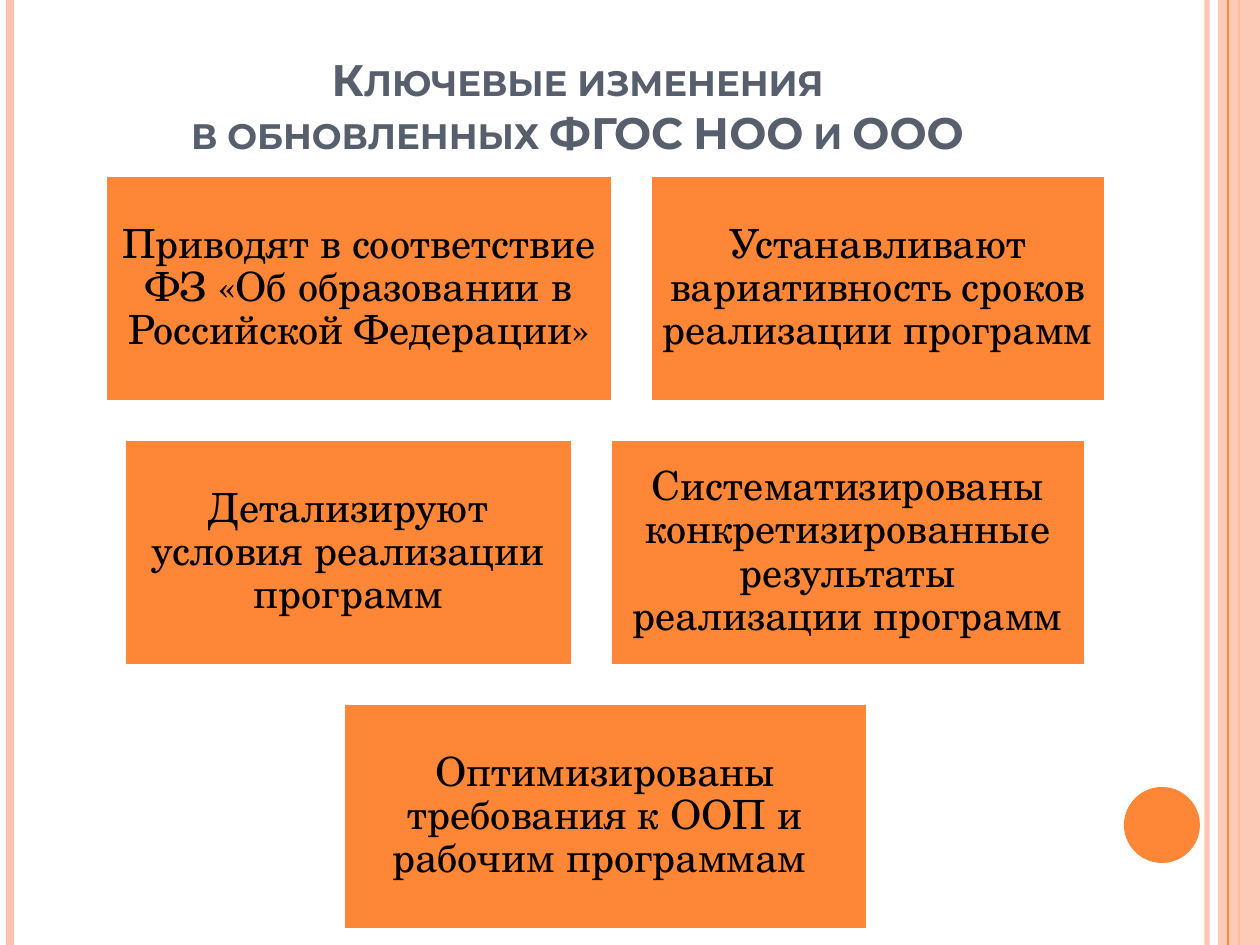
from lxml import etree
from pptx import Presentation
from pptx import util as u
from pptx.dml.color import RGBColor
from pptx.enum import shapes, text
from pptx.oxml import ns

PX = 914400 / 126  # EMU per px
WIDTH, HEIGHT = 1260, 945

ORANGE = RGBColor(0xFE, 0x86, 0x37)
PEACH = RGBColor(0xFE, 0xC3, 0xAE)
SLATE = RGBColor(0x57, 0x5F, 0x6D)
WHITE = RGBColor(0xFF, 0xFF, 0xFF)
BLACK = RGBColor(0x00, 0x00, 0x00)

TITLE_LINES = ["Ключевые изменения", "в обновленных ФГОС НОО и ООО"]

# Each row of cards: (width, text)
CARD_ROWS = [
    [(508, "Приводят в соответствие ФЗ «Об образовании в Российской Федерации»"),
     (456, "Устанавливают вариативность сроков реализации программ")],
    [(449, "Детализируют условия реализации программ"),
     (476, "Систематизированы конкретизированные результаты реализации программ")],
    [(525, "Оптимизированы требования к ООП и рабочим программам ")],
]
CARDS_TOP, CARD_HEIGHT, CARD_GAP, CARDS_CENTRE = 175, 227, 37, 605


def px(length):
    return u.Emu(round(length * PX))


def set_alpha(holder, percent):
    """Make the solid colour inside an element partly transparent."""
    colour = next(holder.iter(ns.qn("a:srgbClr")))
    etree.SubElement(colour, ns.qn("a:alpha")).set("val", str(percent * 1000))


def add_stripe(page, x, colour, points, alpha=None):
    stripe = page.shapes.add_connector(
        shapes.MSO_CONNECTOR.STRAIGHT, px(x), 0, px(x), px(HEIGHT))
    stripe.line.color.rgb = colour
    stripe.line.width = u.Pt(points)
    properties = stripe._element.spPr
    if alpha:
        set_alpha(properties, alpha)
    etree.SubElement(properties, ns.qn("a:effectLst"))


def add_filled(page, kind, left, top, width, height, colour):
    shape = page.shapes.add_shape(kind, px(left), px(top), px(width), px(height))
    shape.shadow.inherit = False
    shape.fill.solid()
    shape.fill.fore_color.rgb = colour
    shape.line.fill.background()
    return shape


def add_span(para, words, font, size, colour):
    span = para.add_run()
    span.text = words
    span.font.name = font
    span.font.size = u.Pt(size)
    span.font.color.rgb = colour
    return span


def add_card(page, left, top, width, words):
    box = add_filled(page, shapes.MSO_SHAPE.RECTANGLE,
                     left, top, width, CARD_HEIGHT, ORANGE)
    box.line.color.rgb = WHITE
    box.line.width = u.Pt(2)
    frame = box.text_frame
    frame.word_wrap = True
    frame.vertical_anchor = text.MSO_ANCHOR.MIDDLE
    frame.margin_left = frame.margin_right = u.Inches(0.1)
    frame.margin_top = frame.margin_bottom = u.Inches(0.1)
    para = frame.paragraphs[0]
    para.alignment = text.PP_ALIGN.CENTER
    para.line_spacing = 0.9
    add_span(para, words, "TeX Gyre Schola", 23, BLACK)


def add_card_rows(page):
    for index, row in enumerate(CARD_ROWS):
        top = CARDS_TOP + index * (CARD_HEIGHT + CARD_GAP)
        total = sum(width for width, _ in row) + CARD_GAP * (len(row) - 1)
        left = CARDS_CENTRE - total // 2
        for width, words in row:
            add_card(page, left, top, width, words)
            left += width + CARD_GAP


def fill_title(page):
    title = page.shapes.title
    title.left, title.top = px(63), px(38)
    title.width, title.height = px(1029), px(127)
    frame = title.text_frame
    frame.word_wrap = True
    frame.auto_size = text.MSO_AUTO_SIZE.NONE
    frame.vertical_anchor = text.MSO_ANCHOR.BOTTOM
    para = frame.paragraphs[0]
    para.alignment = text.PP_ALIGN.CENTER
    for index, words in enumerate(TITLE_LINES):
        if index:
            para.add_line_break()
        span = add_span(para, words, "Montserrat", 25.2, SLATE)
        span.font.bold = True
        span._r.get_or_add_rPr().set("cap", "small")


def add_decoration(page):
    add_stripe(page, 1207, PEACH, 3, alpha=93)
    add_stripe(page, 10, PEACH, 4.5)
    add_stripe(page, 1239, ORANGE, 1.5)
    band = add_filled(page, shapes.MSO_SHAPE.RECTANGLE,
                      1218, 0, WIDTH - 1218, HEIGHT, PEACH)
    set_alpha(band._element.spPr, 87)
    add_stripe(page, 1228, ORANGE, 0.75)
    add_filled(page, shapes.MSO_SHAPE.OVAL, 1124, 787, 76, 76, ORANGE)


def main():
    deck = Presentation()
    deck.slide_width, deck.slide_height = px(WIDTH), px(HEIGHT)
    page = deck.slides.add_slide(deck.slide_layouts[5])

    # Side stripes and circle
    add_decoration(page)
    # Heading
    fill_title(page)
    # Cards of key changes
    add_card_rows(page)

    deck.save("out.pptx")


if __name__ == "__main__":
    main()
